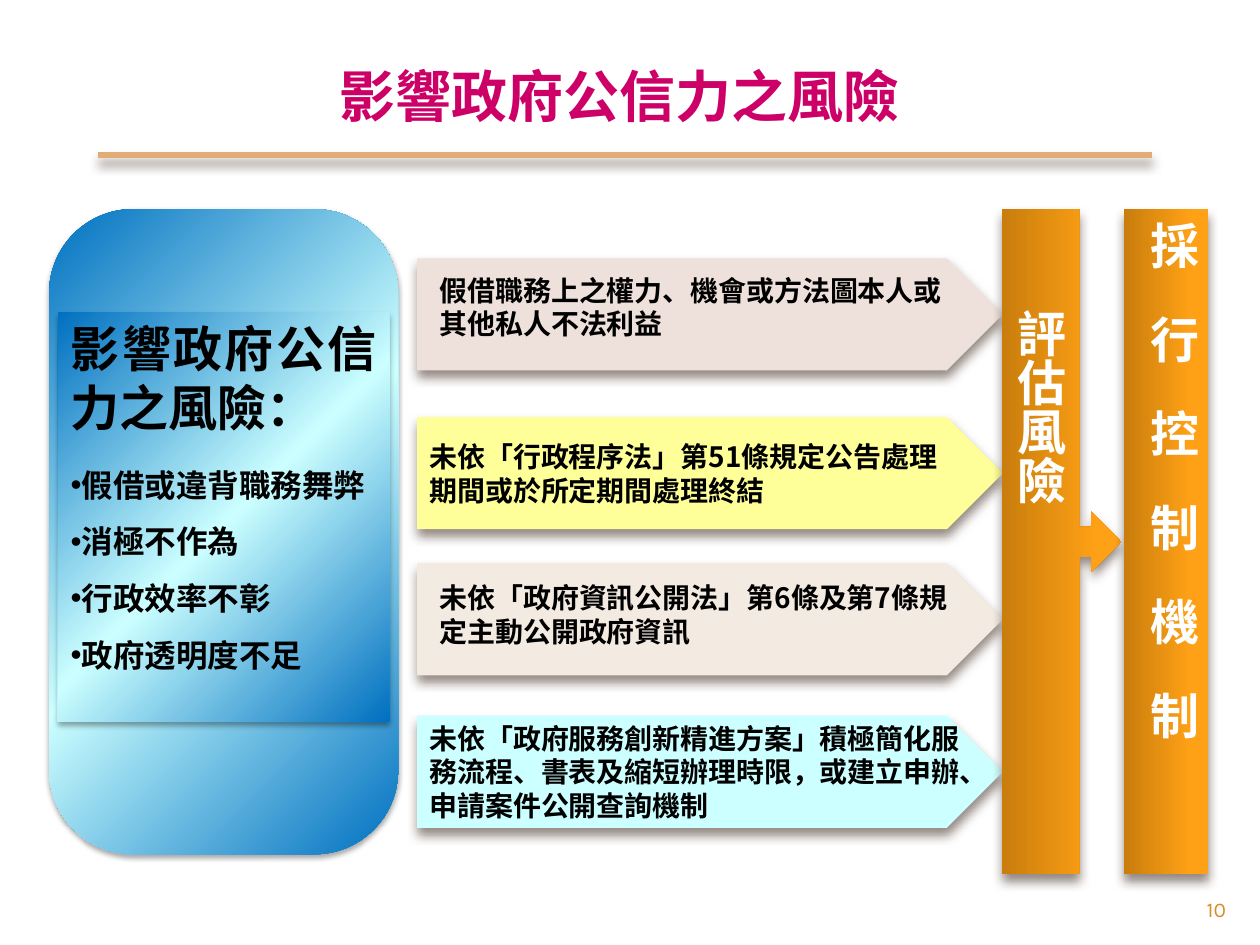
from dataclasses import dataclass

from pptx import Presentation
from pptx import util as u
from pptx.dml.color import RGBColor
from pptx.enum import shapes, text
from pptx.oxml import parse_xml
from pptx.oxml.ns import nsdecls, qn

WIDTH, HEIGHT = 10, 7.5
ALIGN, ANCHOR = text.PP_ALIGN, text.MSO_ANCHOR
SHAPE = shapes.MSO_SHAPE


@dataclass(frozen=True)
class Theme:
    """Colours, fonts, type sizes and effects of the slide."""
    font: str = "Noto Sans CJK SC"
    number_font: str = "Karla"
    title: str = "CC0066"
    ink: str = "000000"
    white: str = "FFFFFF"
    rule: str = "E2AC76"
    number: str = "D48F29"
    title_size: int = 32
    heading_size: int = 28
    bullet_size: int = 18
    label_size: int = 16
    number_size: int = 12
    line_height: float = 1.2
    bullet_line_height: float = 1.8
    orange: tuple = ((0, "C97D0D"), (80, "FFA116"), (100, "FFA217"))
    blue: tuple = ((0, "0070C0"), (49, "CCFFFF"), (100, "0070C0"))
    # colour, opacity %, blur pt, distance pt
    deep_shadow: tuple = ("4E3B30", 60, 6, 4)
    soft_shadow: tuple = ("000000", 35, 3.1, 1.8)


T = Theme()


@dataclass(frozen=True)
class Box:
    """A rectangle in inches."""
    x: float
    y: float
    w: float
    h: float

    def inner(self, x, y, w, h):
        """Return an inner box given as percentages of this one."""
        return Box(self.x + self.w * x / 100, self.y + self.h * y / 100,
                   self.w * w / 100, self.h * h / 100)

    @property
    def emu(self):
        return [u.Inches(v) for v in (self.x, self.y, self.w, self.h)]


def put(obj, **values):
    for name, value in values.items():
        setattr(obj, name, value)


def place(sp, box):
    put(sp, **dict(zip(("left", "top", "width", "height"), box.emu)))


def shadow(sp, style):
    color, opacity, blur, dist = style
    sp.element.spPr.append(parse_xml(
        f'<a:effectLst {nsdecls("a")}><a:outerShdw blurRad="{u.Pt(blur)}" '
        f'dist="{u.Pt(dist)}" dir="5400000" rotWithShape="0"><a:srgbClr val="{color}">'
        f'<a:alpha val="{opacity * 1000}"/></a:srgbClr></a:outerShdw></a:effectLst>'))


def gradient(sp, stops, direction):
    sp.fill.gradient()
    old = sp.element.spPr.find(qn("a:gradFill"))
    marks = "".join(f'<a:gs pos="{pos * 1000}"><a:srgbClr val="{color}"/></a:gs>'
                    for pos, color in stops)
    old.getparent().replace(old, parse_xml(
        f'<a:gradFill {nsdecls("a")} rotWithShape="1"><a:gsLst>{marks}</a:gsLst>'
        f'{direction}</a:gradFill>'))


LINEAR = '<a:lin ang="0" scaled="1"/>'
CORNER = '<a:path path="circle"><a:fillToRect l="100000" t="100000"/></a:path>'


def paint(sp, fill, style, direction=LINEAR):
    """Fill with a colour or gradient stops, drop the outline, add a shadow."""
    sp.line.fill.background()
    if isinstance(fill, str):
        sp.fill.solid()
        sp.fill.fore_color.rgb = RGBColor.from_string(fill)
    else:
        gradient(sp, fill, direction)
    shadow(sp, style)


def add_preset(s, kind, box, fill, style, direction=LINEAR):
    sp = s.shapes.add_shape(kind, *box.emu)
    paint(sp, fill, style, direction)
    return sp


def write(p, words, size, color, align=ALIGN.LEFT, font=T.font, bold=True,
          leading=T.line_height, before=0):
    put(p, alignment=align, line_spacing=u.Pt(round(size * leading, 1)),
        space_before=u.Pt(before), space_after=u.Pt(0))
    r = p.add_run()
    r.text = words
    put(r.font, size=u.Pt(size), bold=bold, name=font)
    r.font.color.rgb = RGBColor.from_string(color)
    r.font._element.append(parse_xml(f'<a:ea {nsdecls("a")} typeface="{font}"/>'))
    return r


def frame(sp, anchor=ANCHOR.TOP, vertical=False):
    tf = sp.text_frame
    put(tf, word_wrap=True, auto_size=text.MSO_AUTO_SIZE.NONE, vertical_anchor=anchor)
    if vertical:
        sp.element.txBody.find(qn("a:bodyPr")).set("vert", "eaVert")
    return tf


def bullet(p, mark=None):
    """Set or clear the bullet, flush with the text."""
    pPr = p._p.get_or_add_pPr()
    tag = f'buChar char="{mark}"' if mark else "buNone"
    pPr.append(parse_xml(f'<a:{tag} {nsdecls("a")}/>'))
    pPr.set("marL", "0")
    pPr.set("indent", "0")


def header(s, box, words):
    place(s.shapes.title, box.inner(4.2, 1.73, 90, 16.67))
    tf = frame(s.shapes.title, ANCHOR.MIDDLE)
    write(tf.paragraphs[0], words, T.title_size, T.title, ALIGN.CENTER)
    rule = box.inner(7.8, 16.4, 83.6, 0)
    line = s.shapes.add_connector(
        shapes.MSO_CONNECTOR.STRAIGHT, *rule.emu[:2],
        u.Inches(rule.x + rule.w), u.Inches(rule.y))
    line.line.width = u.Pt(3)
    line.line.color.rgb = RGBColor.from_string(T.rule)
    shadow(line, T.deep_shadow)


def risk_arrows(s, box, risks):
    """Stack pentagons; a label inset gives the text a box of its own."""
    for top, fill, inset, words in reversed(risks):
        arrow = box.inner(0, top, 100, 19.69)
        sp = add_preset(s, SHAPE.PENTAGON, arrow, fill, T.deep_shadow)
        if inset is None:
            tf = frame(sp, ANCHOR.MIDDLE)
        else:
            tf = frame(s.shapes.add_textbox(*arrow.inner(1.72, inset, 94.41, 71.91).emu))
        write(tf.paragraphs[0], words, T.label_size, T.ink)


def assess_column(s, box, words):
    add_preset(s, SHAPE.RIGHT_ARROW_CALLOUT, box, T.orange, T.deep_shadow)
    label = s.shapes.add_textbox(*box.inner(-8.42, 13.26, 70.53, 81.25).emu)
    write(frame(label, vertical=True).paragraphs[0], words,
          T.heading_size, T.white, ALIGN.JUSTIFY)


def control_column(s, box, words):
    sp = add_preset(s, SHAPE.RECTANGLE, box, T.orange, T.deep_shadow)
    r = write(frame(sp, vertical=True).paragraphs[0], words, T.heading_size, T.white)
    r.font._element.set("spc", "2570")


def summary_panel(s, box, heading, items):
    panel = add_preset(s, SHAPE.ROUNDED_RECTANGLE, box, T.blue, T.soft_shadow, CORNER)
    panel.adjustments[0] = 0.24
    body = s.placeholders[1]
    place(body, box.inner(2.53, 16.02, 94.95, 63.48))
    paint(body, T.blue, T.soft_shadow, CORNER)
    panel.element.addnext(body.element)
    tf = frame(body)
    write(tf.paragraphs[0], heading, T.heading_size, T.ink, ALIGN.JUSTIFY)
    bullet(tf.paragraphs[0])
    for i, item in enumerate(items):
        p = tf.add_paragraph()
        write(p, item, T.bullet_size, T.ink, ALIGN.JUSTIFY,
              leading=T.bullet_line_height, before=0 if i else 6)
        bullet(p, "•")


def page_number(s, box, number):
    tf = frame(s.shapes.add_textbox(*box.emu), ANCHOR.MIDDLE)
    write(tf.paragraphs[0], number, T.number_size, T.number, ALIGN.RIGHT,
          T.number_font, False)


# top %, fill, label inset %, wording
RISKS = [
    (0, "EEE0DB", 7.87, "假借職務上之權力、機會或方法圖本人或其他私人不法利益"),
    (27.88, "FFFF99", None, "未依「行政程序法」第51條規定公告處理期間或於所定期間處理終結"),
    (53.54, "F3EAE2", 10.11, "未依「政府資訊公開法」第6條及第7條規定主動公開政府資訊"),
    (80.31, "CCFFFF", None,
     "未依「政府服務創新精進方案」積極簡化服務流程、書表及縮短辦理時限，或建立申辦、申請案件公開查詢機制"),
]


def main():
    prs = Presentation()
    put(prs, slide_width=u.Inches(WIDTH), slide_height=u.Inches(HEIGHT))
    s = prs.slides.add_slide(prs.slide_layouts[1])
    page = Box(0, 0, WIDTH, HEIGHT)
    page_number(s, page.inner(90, 94.4, 8.3, 3.6), "10")
    header(s, page, "影響政府公信力之風險")
    risk_arrows(s, page.inner(33.1, 27.33, 46.5, 60.27), RISKS)
    assess_column(s, page.inner(79.5, 22.13, 9.5, 70.4), "評估風險")
    control_column(s, page.inner(89.2, 22.13, 6.7, 70.4), "採行控制機制")
    summary_panel(s, page.inner(3.9, 22.13, 27.7, 68.27), "影響政府公信力之風險：",
                  ["假借或違背職務舞弊", "消極不作為", "行政效率不彰", "政府透明度不足"])
    prs.save("out.pptx")


if __name__ == "__main__":
    main()
